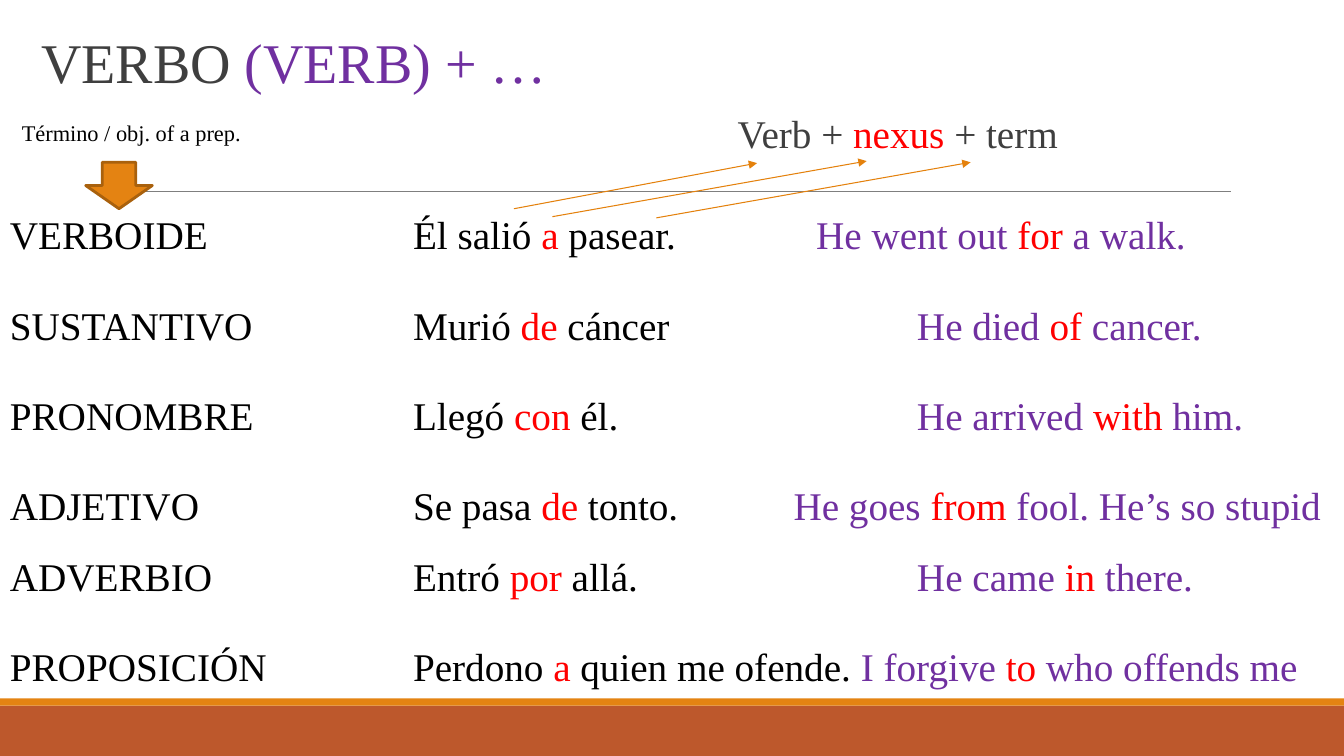
"""Build the slide on Spanish verbs followed by a nexus and a term."""
from lxml import etree
from pptx import Presentation, util as u
from pptx.dml.color import RGBColor
from pptx.enum import shapes as s, text as t
from pptx.oxml.ns import qn

BLACK, GREY, RED, PURPLE = "000000", "3F3F3F", "FF0000", "7030A0"
ORANGE, RUST = "E48312", "BD582C"


def color(code):
    return RGBColor.from_string(code)


def write(para, size, parts):
    for words, code in parts:
        run = para.add_run()
        run.text = words
        run.font.size = u.Pt(size)
        run.font.name = "Times New Roman"
        run.font.color.rgb = color(code)


deck = Presentation()
deck.slide_width, deck.slide_height = u.Cm(33.87), u.Cm(19.05)
slide = deck.slides.add_slide(deck.slide_layouts[6])
items = slide.shapes

for top, high, code in [(17.78, 1.27, RUST), (17.6, 0.18, ORANGE)]:
    band = items.add_shape(s.MSO_SHAPE.RECTANGLE, 0, u.Cm(top), deck.slide_width, u.Cm(high))
    band.shadow.inherit = False
    band.fill.solid()
    band.fill.fore_color.rgb = color(code)
    band.line.fill.background()

lines = [
    (3.33, 4.83, 31.01, 4.83, "7F7F7F", False),
    (12.95, 5.26, 19.08, 4.11, "E4810C", True),
    (13.92, 5.46, 21.84, 4.06, "E4810C", True),
    (16.54, 5.49, 24.46, 4.09, "E4810C", True),
]
for left, top, right, low, code, arrow in lines:
    line = items.add_connector(s.MSO_CONNECTOR.STRAIGHT, u.Cm(left), u.Cm(top), u.Cm(right), u.Cm(low))
    line.line.color.rgb = color(code)
    line.line.width = u.Pt(0.75)
    if arrow:
        etree.SubElement(line.line._get_or_add_ln(), qn("a:tailEnd"), type="triangle")
    etree.SubElement(line._element.spPr, qn("a:effectLst"))

labels = [
    (0.79, 0.64, 15.88, 2.01, 40, 0.85, 0.25, t.MSO_ANCHOR.BOTTOM,
     [("VERBO ", GREY), ("(VERB) + …", PURPLE)]),
    (18.34, 2.64, 9.14, 1.47, 28, 0.9, 0.25, t.MSO_ANCHOR.TOP,
     [("Verb + ", GREY), ("nexus", RED), (" + term", GREY)]),
    (0.3, 2.87, 7.06, 0.94, 16, 1.0, 0.13, t.MSO_ANCHOR.TOP,
     [("Término / obj. of a prep.", BLACK)]),
]
for left, top, wide, high, size, space, inset, anchor, parts in labels:
    frame = items.add_textbox(u.Cm(left), u.Cm(top), u.Cm(wide), u.Cm(high)).text_frame
    frame.word_wrap = True
    frame.vertical_anchor = anchor
    frame.margin_top = frame.margin_bottom = u.Cm(inset)
    para = frame.paragraphs[0]
    para.line_spacing = space
    write(para, size, parts)

rows = [
    ("VERBOIDE", "Él salió ", "a", " pasear.", "\tHe went out ", "for", " a walk.", 20.32),
    ("SUSTANTIVO", "Murió ", "de", " cáncer", "\tHe died ", "of", " cancer.", 22.86),
    ("PRONOMBRE", "Llegó ", "con", " él.", "\tHe arrived ", "with", " him.", 22.86),
    ("ADJETIVO", "Se pasa ", "de", " tonto.", "\tHe goes ", "from", " fool. He’s so stupid", 19.75),
    ("ADVERBIO", "Entró ", "por", " allá.", "\tHe came ", "in", " there.", 22.86),
    ("PROPOSICIÓN", "Perdono ", "a", " quien me ofende. ", "I forgive ", "to", " who offends me", 22.86),
]
frame = items.add_textbox(0, u.Cm(4.47), deck.slide_width, u.Cm(13.79)).text_frame
frame.word_wrap = True
frame.margin_top = frame.margin_bottom = u.Cm(0.25)
for i, (term, *parts, stop) in enumerate(rows):
    para = frame.paragraphs[0] if i == 0 else frame.add_paragraph()
    para.line_spacing = u.Pt(50.4)
    para.space_before = u.Pt(0 if term in ("VERBOIDE", "ADVERBIO") else 14)
    para.space_after = u.Pt(0)
    tabs = etree.SubElement(para._p.get_or_add_pPr(), qn("a:tabLst"))
    for pos in (10.16, stop):
        etree.SubElement(tabs, qn("a:tab"), pos=str(u.Cm(pos)), algn="l")
    codes = [BLACK, BLACK, RED, BLACK, PURPLE, RED, PURPLE]
    write(para, 28, zip([term + "\t", *parts], codes))

arrow = items.add_shape(s.MSO_SHAPE.DOWN_ARROW, u.Cm(2.16), u.Cm(4.09), u.Cm(1.68), u.Cm(1.17))
arrow.shadow.inherit = False
arrow.fill.solid()
arrow.fill.fore_color.rgb = color(ORANGE)
arrow.line.color.rgb = color("A9610D")
arrow.line.width = u.Pt(2)

deck.save("out.pptx")
